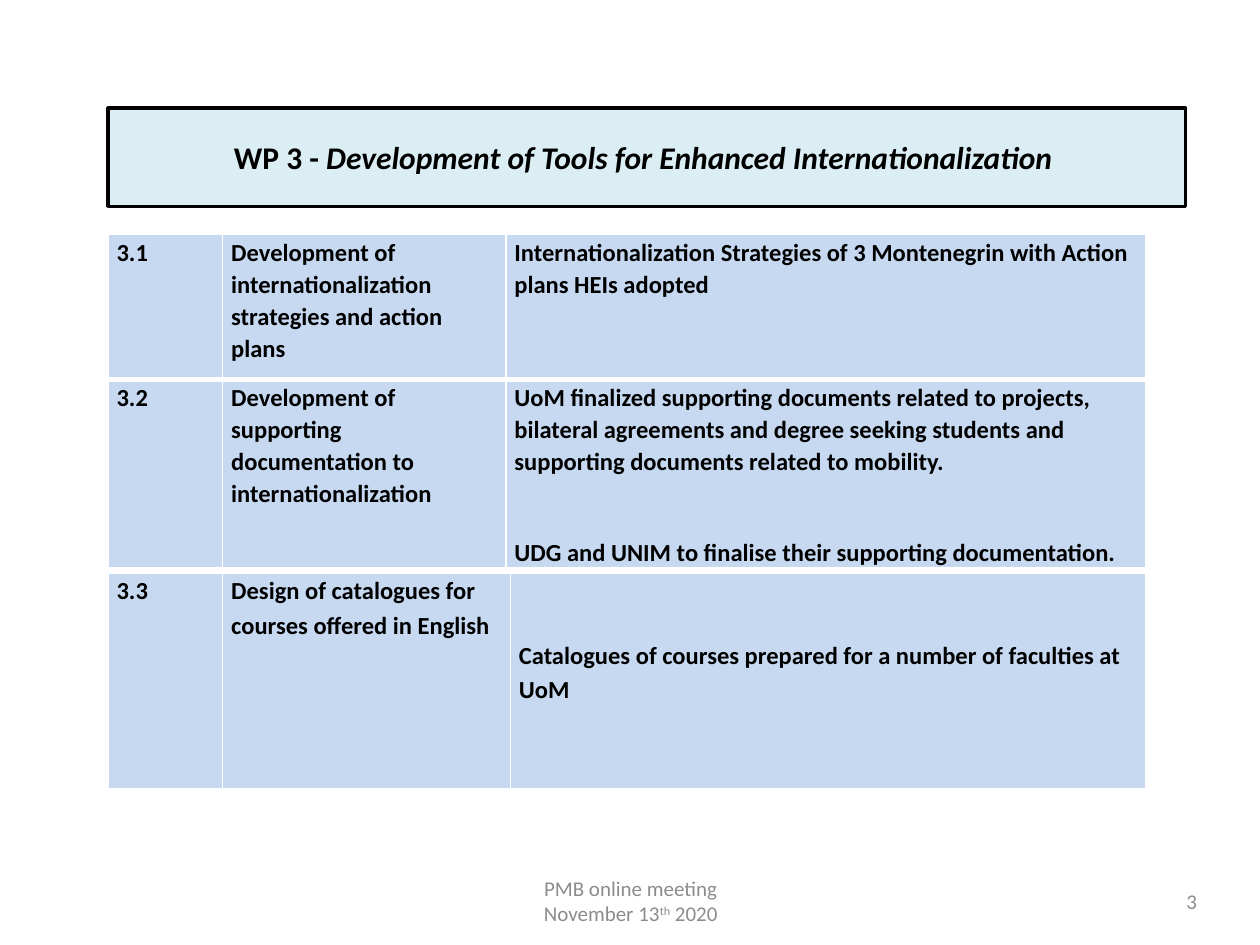
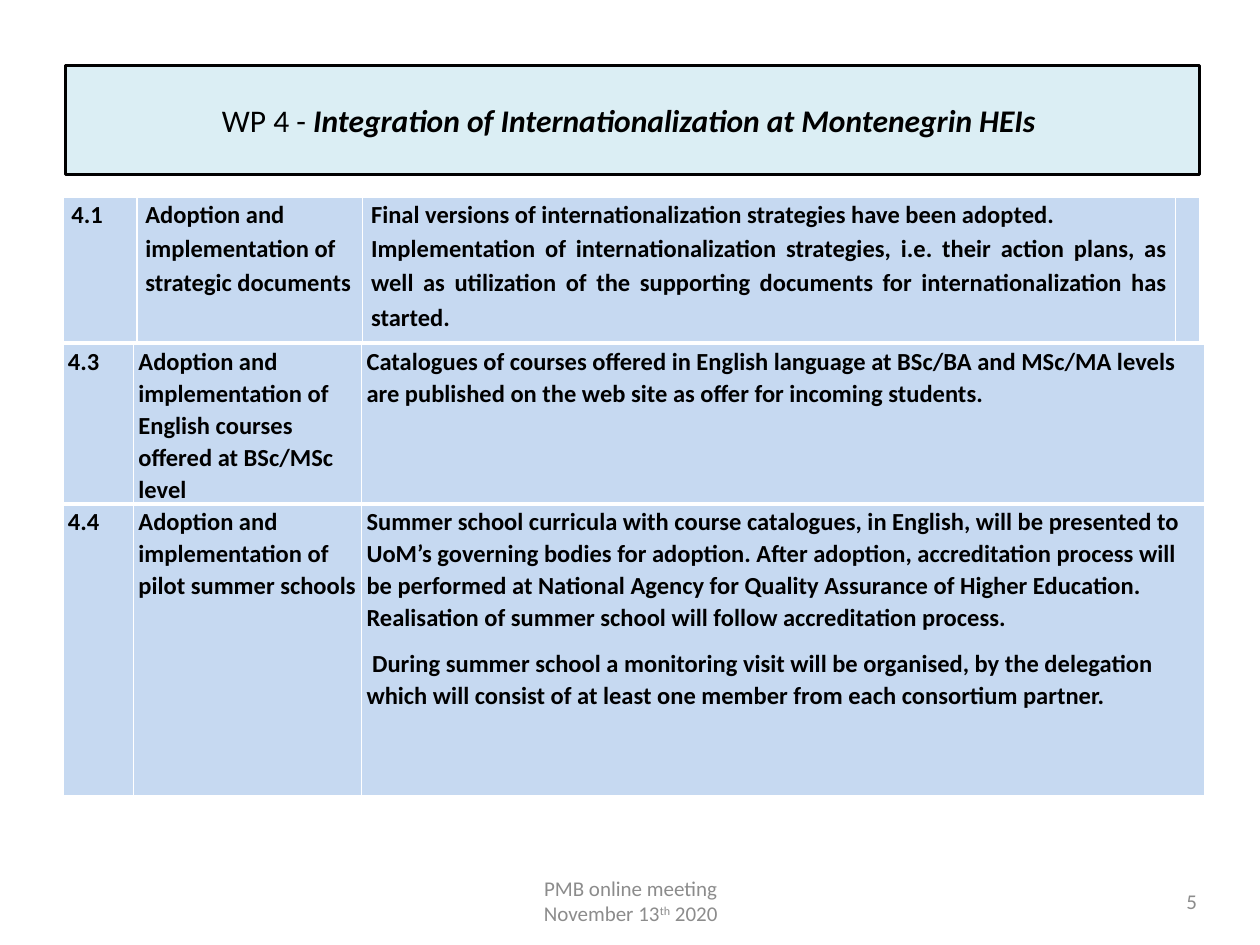
import dataclasses

import pptx
import pptx.dml.color
import pptx.enum.text
import pptx.oxml
import pptx.oxml.ns
import pptx.util
from pptx.util import Cm

ALIGN = pptx.enum.text.PP_ALIGN
MIDDLE = pptx.enum.text.MSO_ANCHOR.MIDDLE
TITLE_ONLY = 5


@dataclasses.dataclass(frozen=True)
class Theme:
    font: str = "Calibri"
    ink: str = "000000"
    muted: str = "8C8C8C"
    band: str = "DBEEF4"
    cell: str = "C6D9F1"
    rule: str = "FFFFFF"
    title_size: int = 18
    body_size: int = 14
    footer_size: int = 12
    outline: int = 2
    thin: int = 1
    thick: int = 3


@dataclasses.dataclass(frozen=True)
class CellStyle:
    line_spacing: float
    after: int
    side: float
    top: float


@dataclasses.dataclass(frozen=True)
class Cell:
    """Paragraphs of one cell, where they differ from the table's style."""
    paragraphs: tuple
    align: object = ALIGN.LEFT
    gap: int = 0
    drop: float = 0


COMPACT = CellStyle(1.07, 8, 0.17, 0.03)
NARROW = dataclasses.replace(COMPACT, side=0.1)
OPEN = CellStyle(1.15, 0, 0.17, 0)


def rgb(value):
    return pptx.dml.color.RGBColor.from_string(value)


def add_text(para, text, *, font, size, color, bold=None, italic=None, raised=False):
    span = para.add_run()
    span.text = text
    span.font.name = font
    span.font.size = pptx.util.Pt(size)
    span.font.color.rgb = rgb(color)
    span.font.bold = bold
    span.font.italic = italic
    if raised:
        span._r.get_or_add_rPr().set("baseline", "30000")


def draw_borders(cell, color, widths):
    """Widths are in points, in the order left, right, top, bottom."""
    properties = cell._tc.get_or_add_tcPr()
    for side, width in zip("LRTB", widths):
        properties.append(pptx.oxml.parse_xml(
            f'<a:ln{side} {pptx.oxml.ns.nsdecls("a")} w="{pptx.util.Pt(width)}">'
            f'<a:solidFill><a:srgbClr val="{color}"/></a:solidFill></a:ln{side}>'))


class Builder:
    def __init__(self, deck, theme):
        self.deck = deck
        self.theme = theme
        self.page = None

    def start_page(self, number):
        self.page = self.deck.slides.add_slide(self.deck.slide_layouts[TITLE_ONLY])
        self.footer([[("PMB online meeting", False)],
                     [("November 13", False), ("th", True), (" 2020", False)]],
                    left=5.31, width=14.81, inset=0, align=ALIGN.CENTER)
        self.footer([[(str(number), False)]],
                    left=20.29, width=3.84, inset=0.25, align=ALIGN.RIGHT)

    def title(self, label, name, *, left, top, width, height, bold_label):
        theme = self.theme
        box = self.page.shapes.title
        box.left, box.top, box.width, box.height = map(Cm, (left, top, width, height))
        box.fill.solid()
        box.fill.fore_color.rgb = rgb(theme.band)
        box.line.color.rgb = rgb(theme.ink)
        box.line.width = pptx.util.Pt(theme.outline)
        frame = box.text_frame
        frame.auto_size = pptx.enum.text.MSO_AUTO_SIZE.NONE
        frame.vertical_anchor = MIDDLE
        para = frame.paragraphs[0]
        para.alignment = ALIGN.CENTER
        look = dict(font=theme.font, size=theme.title_size, color=theme.ink)
        add_text(para, label, bold=bold_label, **look)
        add_text(para, name, bold=True, italic=True, **look)

    def footer(self, lines, *, left, width, inset, align):
        theme = self.theme
        box = self.page.shapes.add_textbox(Cm(left), Cm(17.65), Cm(width), Cm(1.02))
        frame = box.text_frame
        frame.word_wrap = True
        frame.vertical_anchor = MIDDLE
        frame.margin_left, frame.margin_right = Cm(inset), Cm(0)
        for index, spans in enumerate(lines):
            para = frame.add_paragraph() if index else frame.paragraphs[0]
            para.alignment = align
            for text, raised in spans:
                add_text(para, text, font=theme.font, size=theme.footer_size,
                         color=theme.muted, raised=raised)

    def table(self, rows, *, left, top, columns, heights, style):
        theme = self.theme
        grid = self.page.shapes.add_table(
            len(rows), len(columns), Cm(left), Cm(top),
            Cm(sum(columns)), Cm(sum(heights))).table
        grid.first_row = grid.horz_banding = False
        for column, width in zip(grid.columns, columns):
            column.width = Cm(width)
        for row, height in zip(grid.rows, heights):
            row.height = Cm(height)

        outer = theme.thin if len(rows) > 1 else theme.thick
        edges = [outer] + [theme.thick] * (len(rows) - 1) + [outer]
        for r, row in enumerate(rows):
            for c, content in enumerate(row):
                cell = grid.cell(r, c)
                draw_borders(cell, theme.rule,
                             (theme.thin, theme.thin, edges[r], edges[r + 1]))
                self.fill_cell(cell, content, style)

    def fill_cell(self, cell, content, style):
        theme = self.theme
        if isinstance(content, str):
            content = Cell((content,))
        cell.fill.solid()
        cell.fill.fore_color.rgb = rgb(theme.cell)
        cell.margin_left = cell.margin_right = Cm(style.side)
        cell.margin_top, cell.margin_bottom = Cm(style.top + content.drop), Cm(0)
        for index, text in enumerate(content.paragraphs):
            frame = cell.text_frame
            para = frame.add_paragraph() if index else frame.paragraphs[0]
            para.alignment = content.align
            para.line_spacing = style.line_spacing
            para.space_after = pptx.util.Pt(style.after)
            if index and content.gap:
                para.space_before = pptx.util.Pt(content.gap)
            if text:
                add_text(para, text, font=theme.font, size=theme.body_size,
                         color=theme.ink, bold=True)


def build_tools_page(builder):
    builder.start_page(3)
    builder.title("WP 3 - ", "Development of Tools for Enhanced Internationalization ",
                  left=2.18, top=2.18, width=21.72, height=1.98, bold_label=True)
    builder.table([
        ["3.1",
         "Development of internationalization strategies and action plans",
         "Internationalization Strategies of 3 Montenegrin with Action plans HEIs adopted"],
        ["3.2",
         "Development of supporting documentation to internationalization",
         Cell(("UoM finalized supporting documents related to projects, bilateral "
               "agreements and degree seeking students and supporting documents "
               "related to mobility.",
               "UDG and UNIM to finalise their supporting documentation."), gap=26)],
    ], left=2.18, top=4.73, columns=[2.31, 5.71, 12.9], heights=[2.92, 3.8], style=COMPACT)
    builder.table([
        ["3.3",
         "Design of catalogues for courses offered in English",
         Cell(("Catalogues of courses prepared for a number of faculties at UoM",),
              drop=1.3)],
    ], left=2.18, top=11.53, columns=[2.31, 5.8, 12.81], heights=[4.4], style=OPEN)


def build_integration_page(builder):
    builder.start_page(5)
    builder.title("WP 4 - ", "Integration of Internationalization at Montenegrin HEIs ",
                  left=1.32, top=1.32, width=22.86, height=2.2, bold_label=False)
    builder.table([
        ["4.1",
         "Adoption and implementation of strategic documents",
         Cell(("Final versions of internationalization strategies have been adopted. ",
               "Implementation of internationalization strategies, i.e. their action "
               "plans, as well as utilization of the supporting documents for "
               "internationalization has started."), align=ALIGN.JUSTIFY),
         ""],
    ], left=1.27, top=3.94, columns=[1.49, 4.55, 16.39, 0.48], heights=[2.99], style=OPEN)
    builder.table([
        ["4.3",
         "Adoption and implementation of English courses offered at BSc/MSc level",
         "Catalogues of courses offered in English language at BSc/BA and MSc/MA levels "
         "are published on the web site as offer for incoming students."],
        ["4.4",
         "Adoption and implementation of pilot summer schools",
         Cell(("Summer school curricula with course catalogues, in English, will be "
               "presented to UoM’s governing bodies for adoption. After adoption, "
               "accreditation process will be performed at National Agency for Quality "
               "Assurance of Higher Education. Realisation of summer school will follow "
               "accreditation process.",
               " During summer school a monitoring visit will be organised, by the "
               "delegation which will consist of at least one member from each "
               "consortium partner."))],
    ], left=1.27, top=6.93, columns=[1.42, 4.6, 17], heights=[3.23, 5.89], style=NARROW)


def main():
    deck = pptx.Presentation()
    deck.slide_width, deck.slide_height = Cm(25.4), Cm(19.05)
    builder = Builder(deck, Theme())
    build_tools_page(builder)
    build_integration_page(builder)
    deck.save("out.pptx")


if __name__ == "__main__":
    main()
